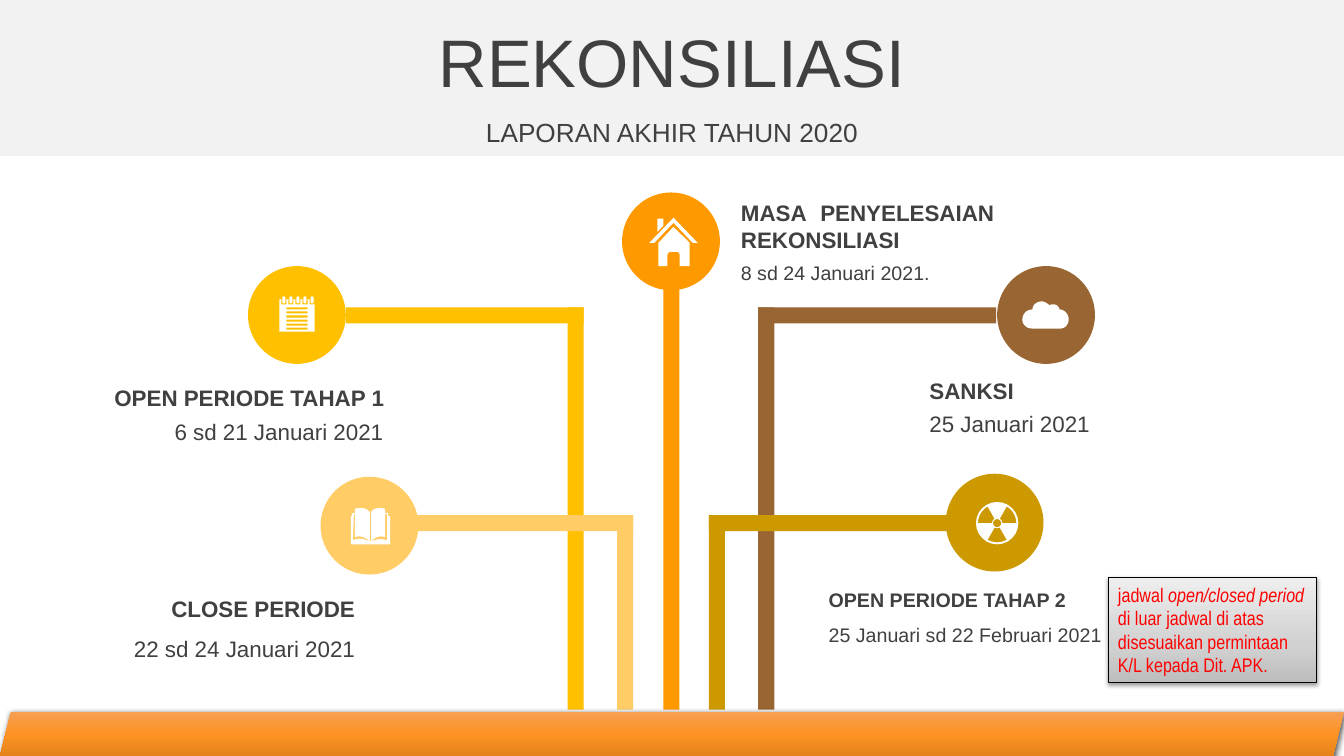
from math import cos, radians, sin

from lxml import etree
from pptx import Presentation
from pptx.dml.color import RGBColor
from pptx.enum.shapes import MSO_SHAPE
from pptx.enum.text import MSO_ANCHOR, PP_ALIGN
from pptx.oxml.ns import qn
from pptx.util import Inches, Pt

RECT, OVAL, SLANT = MSO_SHAPE.RECTANGLE, MSO_SHAPE.OVAL, MSO_SHAPE.PARALLELOGRAM
LEFT, RIGHT, MID, FULL = PP_ALIGN.LEFT, PP_ALIGN.RIGHT, PP_ALIGN.CENTER, PP_ALIGN.JUSTIFY
CENTER, TOP = MSO_ANCHOR.MIDDLE, MSO_ANCHOR.TOP
WHITE, INK, RED = "FFFFFF", "404040", "FF0000"
BAR, DISC, BASE = 0.16, 0.97, 7.04


def color(code):
    return RGBColor.from_string(code)


def flatten(steps):
    points = []
    for step in steps:
        if len(step) == 2:
            points.append(step)
            continue
        x0, y0 = points[-1]
        x1, y1, x2, y2, x3, y3 = step
        for n in range(1, 9):
            t = n / 8
            u = 1 - t
            points.append(tuple(
                u**3 * a + 3 * u * u * t * b + 3 * u * t * t * c + t**3 * d
                for a, b, c, d in ((x0, x1, x2, x3), (y0, y1, y2, y3))))
    return points


def arc(x, y, size, start=0, end=360):
    count = 24
    angles = [radians(start + (end - start) * n / count) for n in range(count + 1)]
    return [(x + size * cos(a), y + size * sin(a)) for a in angles]


def box(x, y, w, h):
    return [(x, y), (x + w, y), (x + w, y + h), (x, y + h)]


def pill(x, y, w, h):
    r = w / 2
    return arc(x + r, y + r, r, 180, 360) + arc(x + r, y + h - r, r, 0, 180)


class Deck:
    def __init__(self):
        self.show = Presentation()
        self.show.slide_width, self.show.slide_height = Inches(13.33), Inches(7.5)
        self.slide = self.show.slides.add_slide(self.show.slide_layouts[6])
        self.font = "Arial"

    def shape(self, kind, x, y, w, h, fill):
        item = self.slide.shapes.add_shape(kind, Inches(x), Inches(y), Inches(w), Inches(h))
        return self.paint(item, fill)

    def paint(self, item, fill):
        item.shadow.inherit = False
        item.fill.solid()
        item.fill.fore_color.rgb = color(fill)
        item.line.fill.background()
        return item

    def fade(self, item, stops, angle):
        item.fill.gradient()
        item.fill.gradient_angle = 360 - angle
        rows = item._element.spPr.find(".//" + qn("a:gsLst"))
        rows.clear()
        for pos, code in stops:
            stop = etree.SubElement(rows, qn("a:gs"), pos=str(pos * 1000))
            etree.SubElement(stop, qn("a:srgbClr"), val=code)

    def shade(self, item, alpha, blur, dist):
        effect = item._element.spPr.find(qn("a:effectLst"))
        cast = etree.SubElement(effect, qn("a:outerShdw"), blurRad=str(Pt(blur)),
                                dist=str(Pt(dist)), dir="5400000", rotWithShape="0")
        tint = etree.SubElement(cast, qn("a:srgbClr"), val="000000")
        etree.SubElement(tint, qn("a:alpha"), val=str(alpha * 1000))

    def icon(self, *parts):
        build = None
        for part in parts:
            points = [(round(x * 1000), round(y * 1000)) for x, y in flatten(part)]
            if build is None:
                build = self.slide.shapes.build_freeform(*points[0], scale=Inches(1) / 1000)
            else:
                build.move_to(*points[0])
            build.add_line_segments(points[1:], close=True)
        self.paint(build.convert_to_shape(), WHITE)

    def label(self, text, x, y, w, h, **style):
        item = self.slide.shapes.add_textbox(Inches(x), Inches(y), Inches(w), Inches(h))
        self.put(item, [(text, False)], **style)

    def put(self, item, text, size=16, bold=False, align=LEFT, ink=INK,
            font=None, anchor=CENTER, gap=0):
        frame = item.text_frame
        frame.word_wrap = True
        frame.vertical_anchor = anchor
        para = frame.paragraphs[0]
        para.alignment = align
        para.space_before = Pt(gap)
        for words, slant in text:
            run = para.add_run()
            run.text = words
            run.font.name = font or self.font
            run.font.size = Pt(size)
            run.font.bold = bold
            run.font.italic = slant
            run.font.color.rgb = color(ink)

    def branch(self, fill, stem, arm, y, disc, top):
        self.shape(RECT, stem, y, BAR, BASE - y, fill)
        self.shape(RECT, arm, y, 2.36, BAR, fill)
        self.shape(OVAL, disc, top, DISC, DISC, fill)


def main():
    deck = Deck()
    deck.shape(RECT, 0, 0, 13.33, 1.55, "F2F2F2")
    deck.label("REKONSILIASI", 0, 0.18, 13.33, 0.84, size=48, align=MID, gap=9.6)
    deck.label("LAPORAN AKHIR TAHUN 2020", 0, 1.1, 13.33, 0.42, size=18.7, align=MID, gap=3.7)

    for row in (
        ("FFC000", 5.63, 3.43, 3.05, 2.46, 2.64),
        ("996633", 7.52, 7.52, 3.05, 9.89, 2.64),
        ("CC9900", 7.03, 7.03, 5.11, 9.38, 4.7),
        ("FFCC66", 6.12, 3.92, 5.11, 3.18, 4.73),
    ):
        deck.branch(*row)
    deck.shape(RECT, 6.58, 2.31, BAR, BASE - 2.31, "FF9900")
    deck.shape(OVAL, 6.17, 1.91, DISC, DISC, "FF9900")

    for text, x, y, w, h, size, bold, align in (
        ("6 sd 21 Januari 2021", 0.16, 4.1, 3.74, 0.37, 16, False, RIGHT),
        ("OPEN PERIODE TAHAP 1", 0.17, 3.76, 3.74, 0.37, 16, True, RIGHT),
        ("22 sd 24 Januari 2021", 1.02, 6.25, 2.6, 0.37, 16, False, RIGHT),
        ("CLOSE PERIODE", 1.02, 5.89, 2.6, 0.3, 16, True, RIGHT),
        ("25 Januari sd 22 Februari 2021", 8.12, 6.13, 2.92, 0.34, 14, False, LEFT),
        ("OPEN PERIODE TAHAP 2", 8.12, 5.78, 2.92, 0.34, 14, True, LEFT),
        ("25 Januari 2021", 9.12, 4.02, 3.74, 0.37, 16, False, LEFT),
        ("SANKSI", 9.12, 3.69, 3.74, 0.37, 16, True, LEFT),
        ("8 sd 24 Januari 2021.", 7.25, 2.53, 2.73, 0.35, 14, False, LEFT),
        ("MASA PENYELESAIAN REKONSILIASI", 7.25, 1.73, 2.71, 1.03, 16, True, FULL),
    ):
        deck.label(text, x, y, w, h, size=size, bold=bold, align=align)

    book = [
        (3.67, 5.37), (3.68, 5.37), (3.74, 5.35, 3.77, 5.34, 3.84, 5.36), (3.84, 5.1),
        (3.82, 5.1), (3.82, 5.33), (3.77, 5.31, 3.72, 5.33, 3.68, 5.37), (3.68, 5.08),
        (3.7, 5.05, 3.73, 5.04, 3.77, 5.04), (3.78, 5.04, 3.8, 5.04, 3.82, 5.05),
        (3.82, 5.09), (3.85, 5.09), (3.85, 5.12), (3.87, 5.12), (3.87, 5.4), (3.48, 5.4),
        (3.48, 5.12), (3.49, 5.12), (3.49, 5.09), (3.52, 5.09), (3.52, 5.05),
        (3.54, 5.04, 3.56, 5.04, 3.58, 5.04), (3.61, 5.04, 3.64, 5.05, 3.67, 5.08),
        (3.67, 5.37), (3.62, 5.33, 3.57, 5.31, 3.52, 5.33), (3.52, 5.1), (3.51, 5.1),
        (3.5, 5.36), (3.57, 5.33, 3.61, 5.35, 3.67, 5.37),
    ]
    cloud = [
        (10.33, 2.99), (10.36, 2.99, 10.39, 3.01, 10.41, 3.03),
        (10.42, 3.02, 10.43, 3.02, 10.45, 3.02), (10.48, 3.02, 10.5, 3.04, 10.51, 3.07),
        (10.56, 3.07, 10.6, 3.12, 10.6, 3.17), (10.6, 3.22, 10.56, 3.26, 10.52, 3.26),
        (10.24, 3.26), (10.18, 3.26, 10.14, 3.22, 10.14, 3.17),
        (10.14, 3.12, 10.18, 3.07, 10.24, 3.07), (10.24, 3.03, 10.28, 2.99, 10.33, 2.99),
    ]
    deck.icon(book)
    deck.icon(cloud)

    lines = [box(2.84, 3.05 + 0.04 * n, 0.21, 0.02) for n in range(6)]
    rings = [2.79 + 0.07 * n for n in range(5)]
    holes = [box(x, 2.97, 0.05, 0.05) for x in rings]
    pins = [pill(x + 0.01, 2.94, 0.03, 0.07) for x in rings]
    deck.icon(box(2.77, 2.97, 0.35, 0.32), *lines, *holes, *pins)

    hub = (9.89, 5.19)
    wings = [arc(*hub, 0.19, a - 30, a + 30) + arc(*hub, 0.05, a + 30, a - 30)
             for a in (90, 210, 330)]
    deck.icon(arc(*hub, 0.21), *wings, arc(*hub, 0.04))

    house = [
        (6.68, 2.25), (6.84, 2.41), (6.84, 2.64), (6.74, 2.64), (6.74, 2.53),
        (6.74, 2.51, 6.73, 2.5, 6.71, 2.5), (6.65, 2.5),
        (6.64, 2.5, 6.62, 2.51, 6.62, 2.53), (6.62, 2.64), (6.53, 2.64), (6.53, 2.41),
    ]
    stack = [(6.52, 2.17), (6.58, 2.17), (6.58, 2.24), (6.52, 2.3)]
    roof = [(6.68, 2.16), (6.92, 2.41), (6.87, 2.41), (6.68, 2.21), (6.49, 2.41), (6.44, 2.41)]
    deck.icon(house, stack, roof)

    note = deck.shape(RECT, 10.99, 5.73, 2.07, 1.04, WHITE)
    deck.fade(note, ((0, "BDBDBD"), (35, "D1D1D1"), (100, "EEEEEE")), 270)
    deck.shade(note, 38, 3.1, 1.6)
    note.line.color.rgb = color("000000")
    note.line.width = Pt(0.75)
    deck.put(note, [
        ("jadwal ", False), ("open/closed period", True),
        (" di luar jadwal di atas disesuaikan permintaan K/L kepada Dit. APK.", False),
    ], size=14, ink=RED, font="Arial Narrow", anchor=TOP)

    floor = deck.shape(SLANT, 0, 7.06, 13.33, 0.44, "FD9323")
    deck.fade(floor, ((0, "F79F55"), (50, "FD9323"), (100, "E5831B")), 90)
    deck.shade(floor, 63, 4.5, 1.5)
    deck.show.save("out.pptx")


if __name__ == "__main__":
    main()
